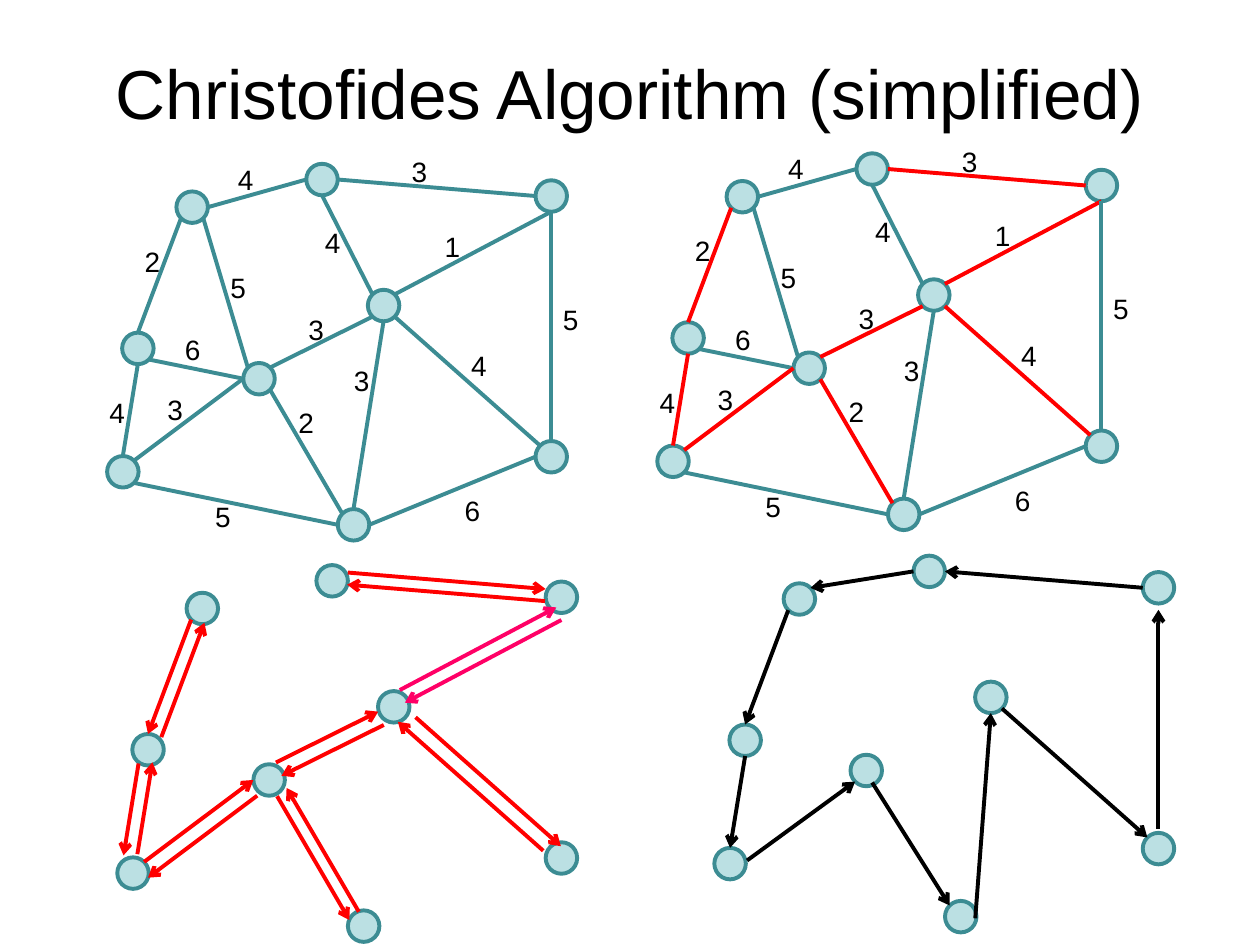
from dataclasses import dataclass
from math import sqrt

from lxml.etree import SubElement
from pptx import Presentation
from pptx.dml.color import RGBColor
from pptx.enum.shapes import MSO_CONNECTOR, MSO_SHAPE
from pptx.enum.text import MSO_ANCHOR, MSO_AUTO_SIZE, PP_ALIGN
from pptx.oxml.ns import qn
from pptx.util import Pt

TITLE = "Christofides Algorithm (simplified)"

NODES = {
    "A": (109.8, 118.4), "B": (70.2, 269.6), "C": (219.2, 174.6),
    "D": (78.8, 199.1), "E": (315, 112), "F": (148, 216.4),
    "G": (202, 299.9), "H": (315, 261), "I": (184, 102.6),
}

# start, start side, end, end side, weight, weight position
EDGES = [
    ("A", "SE", "F", "NW", "5", (124.6, 151.2)),
    ("A", "SW", "D", "N", "2", (75.6, 136.1)),
    ("A", "E", "I", "W", "4", (128.9, 89.3)),
    ("I", "E", "E", "W", "3", (228.2, 85)),
    ("I", "S", "C", "NW", "4", (178.6, 125.3)),
    ("E", "S", "C", "NE", "1", (247, 127.4)),
    ("F", "NE", "C", "SW", "3", (169.2, 175)),
    ("D", "SE", "F", "W", "6", (98.6, 186.5)),
    ("D", "S", "B", "N", "4", (55.4, 222.5)),
    ("B", "NE", "F", "W", "3", (88.6, 221)),
    ("C", "S", "G", "N", "3", (195.1, 204.5)),
    ("E", "S", "H", "N", "5", (314.6, 169.2)),
    ("C", "SE", "H", "NW", "4", (262.1, 195.8)),
    ("G", "E", "H", "W", "6", (258.5, 278.6)),
    ("F", "SE", "G", "NW", "2", (163.4, 228.2)),
    ("B", "SE", "G", "W", "5", (115.9, 282.2)),
]

# tree edge: shift of the outward arrow, shift of the return arrow
TREE = {
    "AD": ((0, 0), (7.6, 1.8)),
    "IE": ((0, -4.7), (-0.4, 2.2)),
    "EC": ((0, 4), (-2.9, -3.2)),
    "FC": ((-2.5, -3.6), (0.7, 4)),
    "DB": ((-5.4, -1.1), (2.5, -1.8)),
    "BF": ((0, 0), (2.2, 9)),
    "CH": ((6.1, -0.4), (-4, 2.2)),
    "FG": ((-1.8, 2.9), (3.6, -1.8)),
}

# start, side, nudge, end, side, nudge
TOUR = [
    ("A", "SW", (0, 0), "D", "N", (0, 0)),
    ("D", "S", (0, 0), "B", "N", (0, 0)),
    ("B", "E", (0.7, -1.8), "F", "SW", (0, 0)),
    ("F", "SE", (-3, 0.5), "G", "NW", (0, 0)),
    ("G", "E", (-0.7, 1), "C", "S", (0, 0)),
    ("C", "SE", (0, 0), "H", "NW", (0, 0)),
    ("H", "N", (0, -2.2), "E", "S", (0, 3.6)),
    ("E", "W", (0, 0), "I", "E", (0, 0)),
    ("I", "W", (0, 0), "A", "NE", (0, 0)),
]

GRAPH_AT, TREE_AT, DOUBLED_AT, TOUR_AT = (0, 0), (314.4, -6), (5.8, 229.3), (347, 223.9)
NODE_SIZE = 18
WEIGHT_SIZE = (23.8, 26.6)
COMPASS = {"N": (0, -1), "S": (0, 1), "W": (-1, 0), "E": (1, 0)}


@dataclass(frozen=True)
class Theme:
    font: str = "Arial"
    title_size: float = 39.6
    weight_size: float = 16
    line_width: float = 2.25
    text: RGBColor = RGBColor(0, 0, 0)
    node: RGBColor = RGBColor(0xBB, 0xE0, 0xE3)
    edge: RGBColor = RGBColor(0x3C, 0x8C, 0x93)
    tree: RGBColor = RGBColor(0xFF, 0, 0)
    accent: RGBColor = RGBColor(0xFF, 0, 0x66)


THEME = Theme()


def add(*points):
    return tuple(sum(values) for values in zip(*points))


def node_side(node, side, origin):
    reach = NODE_SIZE / 2 / sqrt(len(side))
    x, y = add(*(COMPASS[letter] for letter in side), (0, 0))
    return add(NODES[node], origin, (x * reach, y * reach))


def style(font, size):
    font.name = THEME.font
    font.size = Pt(size)
    font.color.rgb = THEME.text


def draw_nodes(slide, origin):
    for center in NODES.values():
        left, top = add(center, origin, (-NODE_SIZE / 2, -NODE_SIZE / 2))
        node = slide.shapes.add_shape(
            MSO_SHAPE.OVAL, Pt(left), Pt(top), Pt(NODE_SIZE), Pt(NODE_SIZE))
        node.shadow.inherit = False
        node.fill.solid()
        node.fill.fore_color.rgb = THEME.node
        node.line.color.rgb = THEME.edge
        node.line.width = Pt(THEME.line_width)


def draw_line(slide, start, end, color, arrow=False):
    edge = slide.shapes.add_connector(
        MSO_CONNECTOR.STRAIGHT, *(Pt(value) for value in (*start, *end)))
    edge.line.color.rgb = color
    edge.line.width = Pt(THEME.line_width)
    if arrow:
        SubElement(edge.line._get_or_add_ln(), qn("a:tailEnd"), type="arrow")
    SubElement(edge._element.spPr, qn("a:effectLst"))


def draw_weight(slide, weight, position):
    label = slide.shapes.add_textbox(*(Pt(value) for value in (*position, *WEIGHT_SIZE)))
    frame = label.text_frame
    frame.word_wrap = False
    frame.auto_size = MSO_AUTO_SIZE.SHAPE_TO_FIT_TEXT
    frame.text = weight
    style(frame.paragraphs[0].runs[0].font, THEME.weight_size)


def draw_graph(slide, origin, marked=()):
    draw_nodes(slide, origin)
    for start, start_side, end, end_side, _, _ in EDGES:
        color = THEME.tree if start + end in marked else THEME.edge
        draw_line(slide, node_side(start, start_side, origin),
                  node_side(end, end_side, origin), color)
    for *_, weight, position in EDGES:
        draw_weight(slide, weight, add(position, origin))


def draw_doubled_tree(slide, origin):
    draw_nodes(slide, origin)
    for start, start_side, end, end_side, _, _ in EDGES:
        if start + end not in TREE:
            continue
        color = THEME.accent if start + end == "EC" else THEME.tree
        outward, back = TREE[start + end]
        near = node_side(start, start_side, origin)
        far = node_side(end, end_side, origin)
        draw_line(slide, add(near, outward), add(far, outward), color, arrow=True)
        draw_line(slide, add(far, back), add(near, back), color, arrow=True)


def draw_tour(slide, origin):
    draw_nodes(slide, origin)
    for start, start_side, start_nudge, end, end_side, end_nudge in TOUR:
        draw_line(slide, add(node_side(start, start_side, origin), start_nudge),
                  add(node_side(end, end_side, origin), end_nudge), THEME.text, arrow=True)


def main():
    deck = Presentation()
    deck.slide_width, deck.slide_height = Pt(720), Pt(540)
    slide = deck.slides.add_slide(deck.slide_layouts[5])
    title = slide.shapes.title
    title.left, title.top, title.width, title.height = Pt(36), Pt(7.2), Pt(648), Pt(90)
    title.text_frame.text = TITLE
    title.text_frame.vertical_anchor = MSO_ANCHOR.MIDDLE
    heading = title.text_frame.paragraphs[0]
    heading.alignment = PP_ALIGN.CENTER
    style(heading.runs[0].font, THEME.title_size)
    draw_graph(slide, GRAPH_AT)
    draw_graph(slide, TREE_AT, TREE)
    draw_doubled_tree(slide, DOUBLED_AT)
    draw_tour(slide, TOUR_AT)
    deck.save("out.pptx")


if __name__ == "__main__":
    main()
